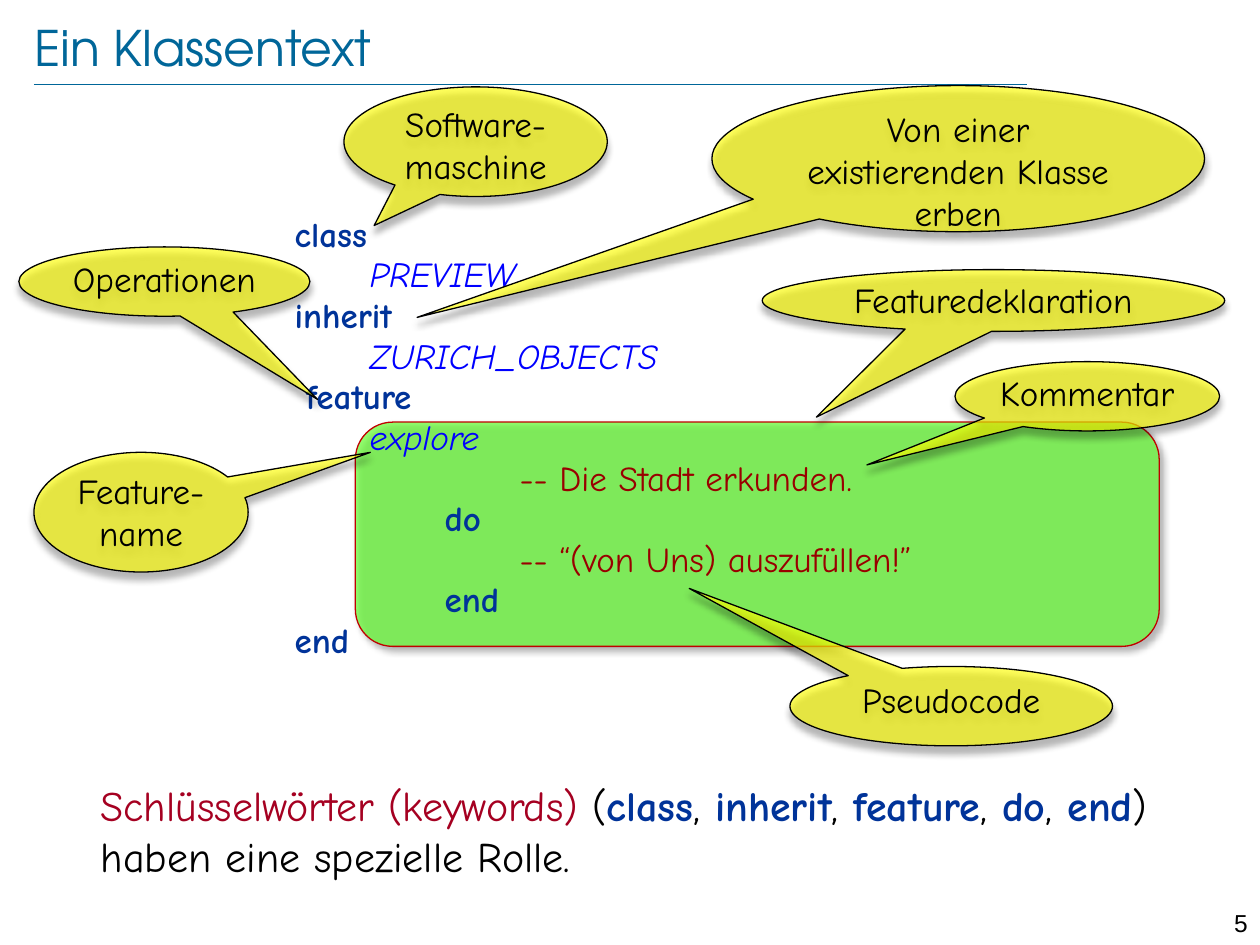
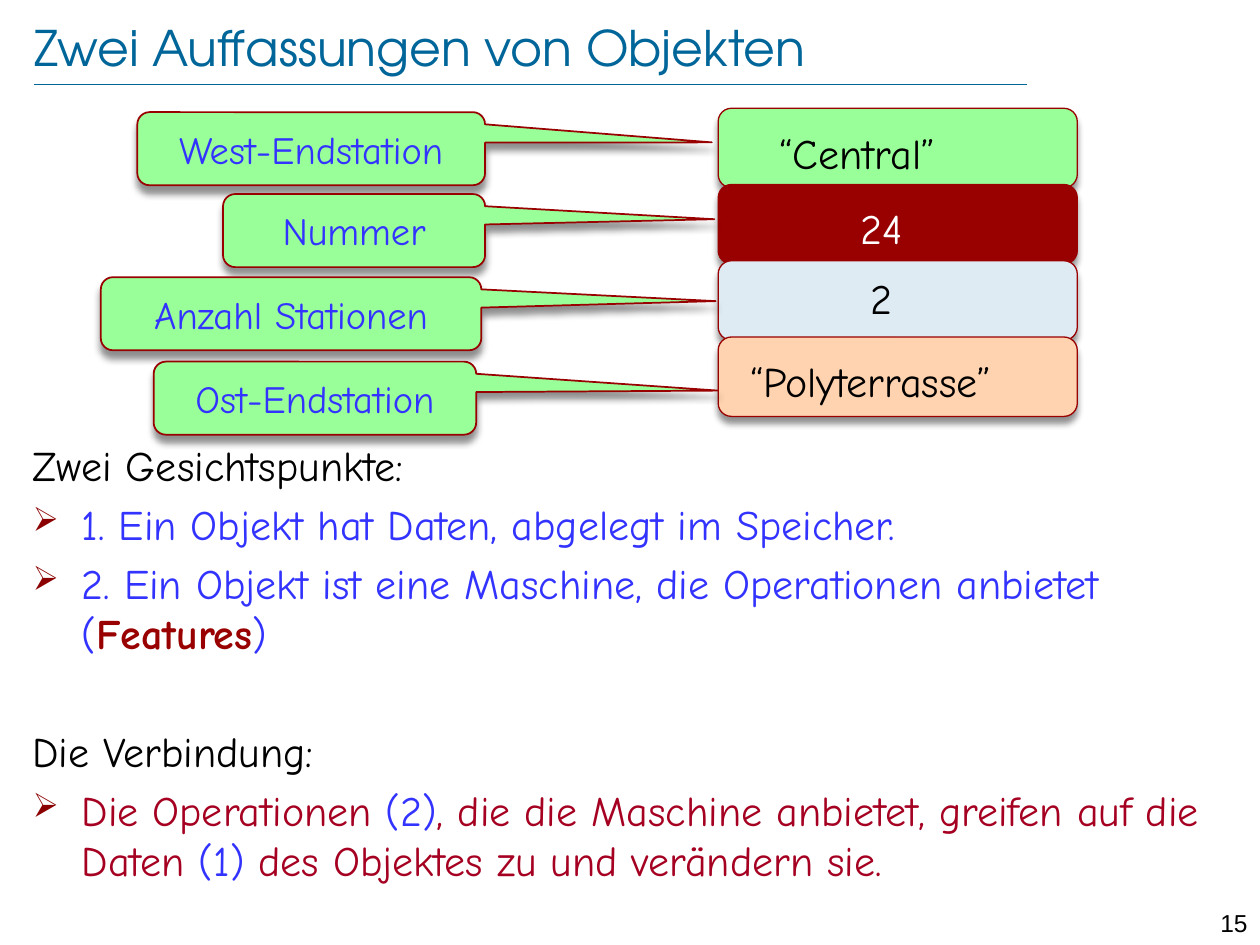
import dataclasses

import lxml.etree
import pptx
import pptx.dml.color
import pptx.enum.shapes
import pptx.enum.text
import pptx.oxml.ns
import pptx.util

Inches = pptx.util.Inches
Pt = pptx.util.Pt
SHAPE = pptx.enum.shapes.MSO_SHAPE
ALIGN = pptx.enum.text.PP_ALIGN
ANCHOR = pptx.enum.text.MSO_ANCHOR


@dataclasses.dataclass(frozen=True)
class Theme:
    title_font: str = "TeX Gyre Adventor"
    text_font: str = "Comic Neue"
    page_font: str = "Arial"
    title_size: int = 28
    text_size: int = 24
    label_size: int = 22
    code_size: int = 20
    page_size: int = 14
    teal: str = "006699"
    black: str = "000000"
    white: str = "FFFFFF"
    yellow: str = "FFFF00"
    lime: str = "66FF33"
    mint: str = "99FF99"
    ice: str = "DFEBF3"
    peach: str = "FFD3AF"
    red: str = "C00000"
    maroon: str = "990000"
    bullet: str = "8B0000"
    blue: str = "3333FF"
    drop: tuple = (43, 4, 4, 90)  # opacity, blur, distance, angle
    slant: tuple = (40, 4, 3, 45)


THEME = Theme()

# Run styles: colour and font attributes
STYLES = {
    "plain": (THEME.black, {}),
    "light": (THEME.white, {}),
    "blue": (THEME.blue, {}),
    "crimson": ("A50021", {}),
    "strong": (THEME.maroon, {"bold": True}),
    "note": (THEME.maroon, {}),
    "key": ("003399", {"bold": True}),
    "name": ("0000FF", {"italic": True}),
    "title": (THEME.teal, {"name": THEME.title_font}),
    "page": (THEME.black, {"name": THEME.page_font}),
}


def put(item, values):
    for name, value in values.items():
        setattr(item, name, value)


def color(code):
    return pptx.dml.color.RGBColor.from_string(code)


def node(parent, tag, **values):
    child = lxml.etree.SubElement(parent, pptx.oxml.ns.qn(tag))
    for name, value in values.items():
        child.set(name, str(value))
    return child


def area(box):
    return [Inches(value) for value in box]


def add_runs(para, runs, size):
    for text, style in runs:
        run = para.add_run()
        run.text = text
        code, extra = STYLES[style]
        put(run.font, {"name": THEME.text_font, "size": Pt(size), **extra})
        run.font.color.rgb = color(code)


def set_frame(frame, anchor=ANCHOR.TOP, side=0.1, edge=0.05):
    put(frame, {
        "word_wrap": True, "vertical_anchor": anchor,
        "margin_left": Inches(side), "margin_right": Inches(side),
        "margin_top": Inches(edge), "margin_bottom": Inches(edge),
    })


def add_text(slide, box, runs, size=THEME.text_size, align=ALIGN.LEFT):
    frame = slide.shapes.add_textbox(*area(box)).text_frame
    set_frame(frame)
    para = frame.paragraphs[0]
    para.alignment = align
    add_runs(para, runs, size)


def add_lines(slide, box, count):
    """Add a text box and return its empty paragraphs."""
    frame = slide.shapes.add_textbox(*area(box)).text_frame
    set_frame(frame)
    for _ in range(count - 1):
        frame.add_paragraph()
    return frame.paragraphs


def indent(para, left, first=0):
    props = para._p.get_or_add_pPr()
    props.set("marL", str(Inches(left)))
    props.set("indent", str(Inches(first)))
    return props


def add_block(slide, kind, box, fill, line, width=0.75, alpha=100, shade=THEME.drop):
    shape = slide.shapes.add_shape(kind, *area(box))
    shape.fill.solid()
    shape.fill.fore_color.rgb = color(fill)
    shape.line.color.rgb = color(line)
    shape.line.width = Pt(width)
    shape.shadow.inherit = False
    props = shape._element.spPr
    if alpha < 100:
        solid = props.find(pptx.oxml.ns.qn("a:solidFill"))
        node(solid[0], "a:alpha", val=alpha * 1000)
    # Soft shadow
    depth, blur, dist, angle = shade
    effects = props.find(pptx.oxml.ns.qn("a:effectLst"))
    outer = node(effects, "a:outerShdw", blurRad=Pt(blur), dist=Pt(dist),
                 dir=angle * 60000, algn="ctr", rotWithShape=0)
    black = node(outer, "a:srgbClr", val=THEME.black)
    node(black, "a:alpha", val=depth * 1000)
    return shape


def aim(shape, box, tip):
    """Point the callout's tail at the tip."""
    left, top, width, height = box
    shape.adjustments[0] = (tip[0] - left - width / 2) / width
    shape.adjustments[1] = (tip[1] - top - height / 2) / height


def add_label(shape, text, style, size, anchor, edge):
    set_frame(shape.text_frame, anchor, 0, edge)
    para = shape.text_frame.paragraphs[0]
    para.alignment = ALIGN.CENTER
    add_runs(para, [(text, style)], size)


def add_bubble(slide, text, box, tip):
    shape = add_block(slide, SHAPE.OVAL_CALLOUT, box, THEME.yellow, THEME.black, alpha=64)
    aim(shape, box, tip)
    add_label(shape, text, "plain", THEME.code_size, ANCHOR.TOP, 0)


def add_tag(slide, text, box, tip):
    shape = add_block(slide, SHAPE.ROUNDED_RECTANGULAR_CALLOUT, box,
                      THEME.mint, THEME.maroon, width=1)
    aim(shape, box, tip)
    add_label(shape, text, "blue", THEME.label_size, ANCHOR.MIDDLE, 0.05)


def add_slide(deck, title, page):
    slide = deck.slides.add_slide(deck.slide_layouts[5])
    # Title
    holder = slide.shapes.title
    sides = ("left", "top", "width", "height")
    put(holder, dict(zip(sides, area((0.27, 0.13, 8.69, 0.48)))))
    set_frame(holder.text_frame, ANCHOR.MIDDLE, 0, 0)
    holder.text_frame.auto_size = pptx.enum.text.MSO_AUTO_SIZE.NONE
    para = holder.text_frame.paragraphs[0]
    para.alignment = ALIGN.LEFT
    add_runs(para, [(title, "title")], THEME.title_size)
    # Rule under the title
    rule = slide.shapes.add_connector(
        pptx.enum.shapes.MSO_CONNECTOR.STRAIGHT, *area((0.27, 0.67, 8.15, 0.67)))
    rule.line.color.rgb = color(THEME.teal)
    rule.line.width = Pt(0.25)
    node(rule._element.spPr, "a:effectLst")
    # Page number
    add_text(slide, (9.45, 7.16, 0.55, 0.24), [(page, "page")],
             THEME.page_size, ALIGN.RIGHT)
    return slide


def add_code(slide, box, lines):
    for index, (para, line) in enumerate(zip(add_lines(slide, box, len(lines)), lines)):
        left, text, style = line
        indent(para, left)
        para.line_spacing = 0.8
        para.space_before = Pt(4 if index else 0)
        add_runs(para, [(text, style)], THEME.code_size)


def add_points(slide, box, points):
    for para, (mark, before, runs) in zip(add_lines(slide, box, len(points)), points):
        props = indent(para, 0.39, -0.39)
        para.space_before = Pt(before)
        if mark:
            tint = node(props, "a:buClr")
            node(tint, "a:srgbClr", val=THEME.bullet)
            node(props, "a:buSzPct", val=80000)
            node(props, "a:buChar", char="➢")
        add_runs(para, runs, THEME.text_size)


def build_class(deck):
    slide = add_slide(deck, "Ein Klassentext", "5")
    add_block(slide, SHAPE.FLOWCHART_ALTERNATE_PROCESS, (2.82, 3.35, 6.38, 1.78),
              THEME.lime, THEME.red, alpha=70, shade=THEME.slant)

    # Class text
    tab = 0.595
    add_code(slide, (2.24, 1.7, 7.44, 3.54), [
        (0, "class", "key"),
        (tab, "PREVIEW", "name"),
        (0, "inherit", "key"),
        (tab, "ZURICH_OBJECTS", "name"),
        (0.09, "feature", "key"),
        (tab, "explore", "name"),
        (3 * tab, "-- Die Stadt erkunden.", "note"),
        (2 * tab, "do", "key"),
        (3 * tab, "-- “(von Uns) auszufüllen!”", "note"),
        (2 * tab, "end", "key"),
        (0, "end", "key"),
    ])

    # Callouts: text, box, tip of the tail
    for text, box, tip in [
        ("Software-maschine", (2.73, 0.69, 2.09, 0.87), (2.97, 1.79)),
        ("Von einer existierenden Klasse erben", (5.65, 0.68, 3.91, 1.16), (3.31, 2.52)),
        ("Operationen", (0.15, 1.96, 2.31, 0.55), (2.52, 3.17)),
        ("Feature-name", (0.27, 3.59, 1.7, 0.95), (2.94, 3.59)),
        ("Kommentar", (7.58, 2.87, 2.1, 0.55), (6.88, 3.69)),
        ("Featuredeklaration", (6.05, 2.14, 3.67, 0.49), (6.48, 3.31)),
        ("Pseudocode", (6.27, 5.29, 2.56, 0.63), (5.47, 4.67)),
    ]:
        add_bubble(slide, text, box, tip)

    # Keyword summary
    runs = [("Schlüsselwörter (keywords) ", "crimson"), ("(", "plain"), ("class", "key")]
    for word in ("inherit", "feature", "do", "end"):
        runs += [(",", "plain"), (" " + word, "key")]
    runs.append((") haben eine spezielle Rolle.", "plain"))
    add_text(slide, (0.7, 6.14, 8.66, 0.91), runs)


def build_views(deck):
    slide = add_slide(deck, "Zwei Auffassungen von Objekten", "15")
    near, far = 4.8, 38.4
    add_points(slide, (0.16, 3.44, 9.59, 3.69), [
        (False, 0, [("Zwei Gesichtspunkte:", "plain")]),
        (True, near, [("1. Ein Objekt hat Daten, abgelegt im Speicher.", "blue")]),
        (True, near, [("2. Ein Objekt ist eine Maschine, die Operationen anbietet (", "blue"),
                      ("Features", "strong"), (")", "blue")]),
        (False, far, [("Die Verbindung:", "plain")]),
        (True, near, [("Die Operationen ", "crimson"), ("(2)", "blue"),
                      (", die die Maschine anbietet, greifen auf die Daten ", "crimson"),
                      ("(1)", "blue"),
                      (" des Objektes zu und verändern sie.", "crimson")]),
    ])

    # Object fields
    for row, fill in enumerate((THEME.mint, THEME.maroon, THEME.ice, THEME.peach)):
        add_block(slide, SHAPE.ROUNDED_RECTANGLE, (5.7, 0.86 + row * 0.605, 2.85, 0.63),
                  fill, THEME.maroon)

    # Field values
    for text, style, left, top, width, align in [
        ("“Central”", "plain", 6.09, 0.96, 2.44, ALIGN.LEFT),
        ("24", "light", 5.78, 1.56, 2.44, ALIGN.CENTER),
        ("2", "plain", 5.78, 2.11, 2.44, ALIGN.CENTER),
        ("“Polyterrasse”", "plain", 5.86, 2.77, 2.68, ALIGN.LEFT),
    ]:
        add_text(slide, (left, top, width, 0.5), [(text, style)], align=align)

    # Field names: text, left, top, width, tip of the tail
    for text, left, top, width, tip in [
        ("West-Endstation", 1.09, 0.89, 2.76, (5.65, 1.13)),
        ("Nummer", 1.77, 1.54, 2.08, (5.67, 1.74)),
        ("Anzahl Stationen", 0.8, 2.2, 3.02, (5.68, 2.39)),
        ("Ost-Endstation", 1.22, 2.87, 2.56, (5.7, 3.1)),
    ]:
        add_tag(slide, text, (left, top, width, 0.58), tip)


def main():
    deck = pptx.Presentation()
    put(deck, {"slide_width": Inches(10), "slide_height": Inches(7.5)})
    build_class(deck)
    build_views(deck)
    deck.save("out.pptx")


if __name__ == "__main__":
    main()
